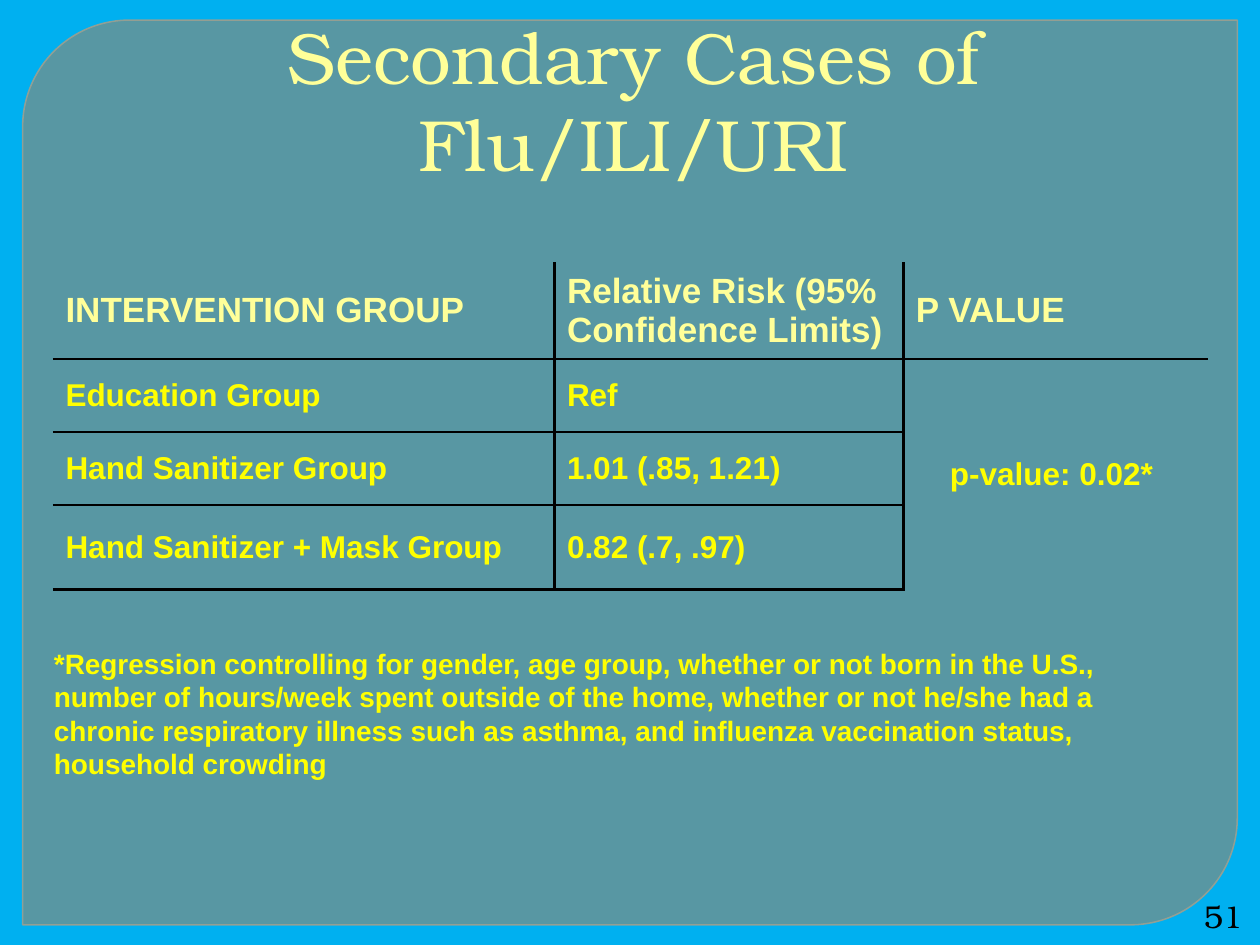
import pptx
import pptx.util
import pptx.dml.color
import pptx.enum.shapes
import pptx.enum.text
import pptx.oxml
import pptx.oxml.ns

Inches = pptx.util.Inches
Pt = pptx.util.Pt
Align = pptx.enum.text.PP_ALIGN
Anchor = pptx.enum.text.MSO_ANCHOR

TITLE = "Secondary Cases of Flu/ILI/URI"
ROWS = [
    ("INTERVENTION GROUP", "Relative Risk (95% Confidence Limits)", "P VALUE"),
    ("Education Group", "Ref", "p-value: 0.02* "),
    ("Hand Sanitizer Group", "1.01 (.85, 1.21)", ""),
    ("Hand Sanitizer + Mask Group", "0.82 (.7, .97)", ""),
]
FOOTNOTE = (
    "*Regression controlling for gender, age group, whether or not born in the U.S., "
    "number of hours/week spent outside of the home, whether or not he/she had a "
    "chronic respiratory illness such as asthma, and influenza vaccination status, "
    "household crowding"
)
PAGE_NUMBER = "51"
COLUMN_WIDTHS = (3.98, 2.77, 2.42)
ROW_HEIGHTS = (0.77, 0.58, 0.58, 0.67)
PLAIN_TABLE_STYLE = "{2D5ABB26-0587-4C30-8999-92F81FD0307C}"

THEME = {
    "background": "00B0F0",
    "panel": "888B7B",
    "panel_line": "9DA090",
    "rule": "000000",
    "title": ("TeX Gyre Bonum", 41.4, "FFFF99", False),
    "header": ("Arial", 20, "FFFF99", True),
    "body": ("Arial", 18, "FFFF00", True),
    "footnote": ("Arial", 16, "FFFF00", True),
    "number": ("TeX Gyre Bonum", 18, "000000", False),
}


def color(name):
    return pptx.dml.color.RGBColor.from_string(name)


def write(frame, text, style, align=Align.LEFT, anchor=Anchor.TOP):
    font_name, size, shade, bold = THEME[style]
    frame.word_wrap = True
    frame.vertical_anchor = anchor
    para = frame.paragraphs[0]
    para.alignment = align
    span = para.add_run()
    span.text = text
    span.font.name = font_name
    span.font.size = Pt(size)
    span.font.bold = bold
    span.font.color.rgb = color(shade)
    return para


def set_opacity(fill_owner, percent):
    for shade in fill_owner.iter(pptx.oxml.ns.qn("a:srgbClr")):
        shade.append(pptx.oxml.parse_xml(
            f'<a:alpha {pptx.oxml.ns.nsdecls("a")} val="{percent * 1000}"/>'))


def add_panel(page):
    panel = page.shapes.add_shape(
        pptx.enum.shapes.MSO_SHAPE.ROUND_2_DIAG_RECTANGLE,
        Inches(0.18), Inches(0.16), Inches(9.64), Inches(7.18))
    panel.adjustments[0] = 0.118
    panel.adjustments[1] = 0
    panel.shadow.inherit = False
    panel.fill.solid()
    panel.fill.fore_color.rgb = color(THEME["panel"])
    set_opacity(panel.fill._xPr.find(pptx.oxml.ns.qn("a:solidFill")), 65)
    panel.line.color.rgb = color(THEME["panel_line"])
    panel.line.width = Pt(0.87)
    set_opacity(panel.line._ln, 88)
    page.shapes._spTree.insert(2, panel._element)


def set_borders(cell, widths):
    properties = cell._tc.get_or_add_tcPr()
    for position, (side, width) in enumerate(widths.items()):
        paint = (f'<a:solidFill><a:srgbClr val="{THEME["rule"]}"/></a:solidFill>'
                 if width else "<a:noFill/>")
        properties.insert(position, pptx.oxml.parse_xml(
            f'<a:ln{side} {pptx.oxml.ns.nsdecls("a")} w="{Pt(width)}">{paint}</a:ln{side}>'))


def border_widths(row, column):
    last = column == len(COLUMN_WIDTHS) - 1
    header_rule = 1 if last else 1.5
    inner_rule = 0 if last else 1.5
    return {
        "L": 1.5 if column else 0,
        "R": 0 if last else 1.5,
        "T": (0, header_rule)[row] if row < 2 else inner_rule,
        "B": header_rule if row == 0 else inner_rule,
    }


def add_results(page):
    frame = page.shapes.add_table(
        len(ROWS), len(COLUMN_WIDTHS), Inches(0.42), Inches(2.08),
        Inches(sum(COLUMN_WIDTHS)), Inches(sum(ROW_HEIGHTS)))
    table = frame.table
    table.first_row = False
    table.horz_banding = False
    table._tbl.tblPr.find(pptx.oxml.ns.qn("a:tableStyleId")).text = PLAIN_TABLE_STYLE
    for column, width in zip(table.columns, COLUMN_WIDTHS):
        column.width = Inches(width)
    for row, height in zip(table.rows, ROW_HEIGHTS):
        row.height = Inches(height)
    table.cell(1, 2).merge(table.cell(3, 2))
    for r, texts in enumerate(ROWS):
        for c, text in enumerate(texts):
            cell = table.cell(r, c)
            cell.fill.background()
            cell.vertical_anchor = Anchor.MIDDLE
            set_borders(cell, border_widths(r, c))
            if text:
                align = Align.CENTER if cell.is_merge_origin else Align.LEFT
                write(cell.text_frame, text, "body" if r else "header",
                      align, Anchor.MIDDLE)


def add_text(page, place, *content):
    box = page.shapes.add_textbox(*map(Inches, place))
    return write(box.text_frame, *content)


def main():
    deck = pptx.Presentation()
    deck.slide_width, deck.slide_height = Inches(10), Inches(7.5)
    page = deck.slides.add_slide(deck.slide_layouts[5])
    page.background.fill.solid()
    page.background.fill.fore_color.rgb = color(THEME["background"])
    add_panel(page)

    title = page.shapes.title
    title.left, title.top = Inches(0.5), Inches(0.42)
    title.width, title.height = Inches(9), Inches(1.11)
    para = write(title.text_frame, TITLE, "title", Align.CENTER, Anchor.BOTTOM)
    para._p.get_or_add_pPr().set("marL", str(Inches(0.06)))
    title.text_frame.auto_size = pptx.enum.text.MSO_AUTO_SIZE.NONE

    add_results(page)
    add_text(page, (0.33, 5.08, 8.83, 1.18), FOOTNOTE, "footnote")
    add_text(page, (9.45, 7.12, 0.51, 0.3), PAGE_NUMBER, "number",
             Align.RIGHT, Anchor.MIDDLE)
    deck.save("out.pptx")


if __name__ == "__main__":
    main()
